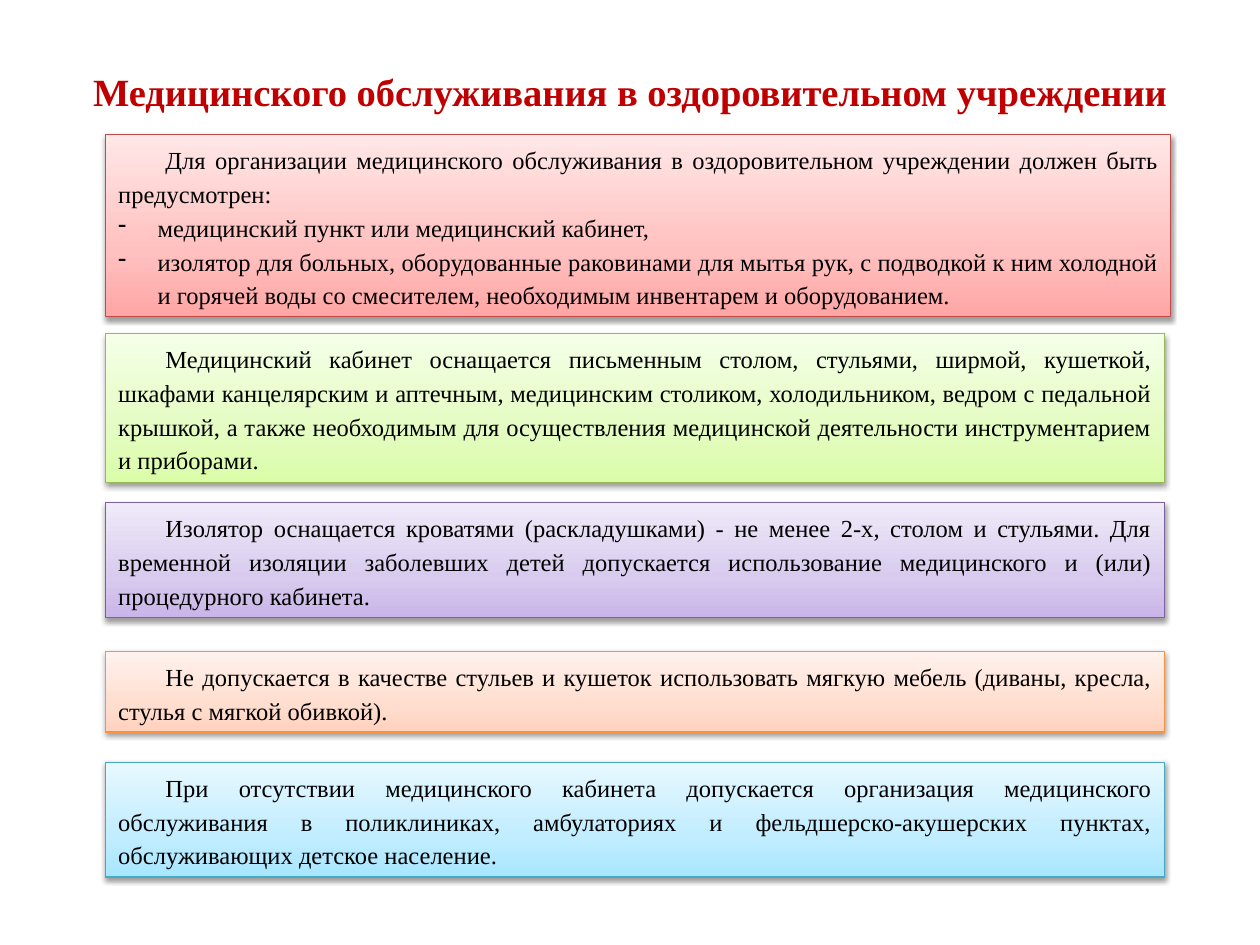
from copy import deepcopy
from dataclasses import dataclass

from lxml.etree import SubElement
from pptx import Presentation
from pptx.dml.color import RGBColor
from pptx.enum.shapes import MSO_SHAPE as Preset
from pptx.enum.text import MSO_ANCHOR as Anchor, MSO_AUTO_SIZE as AutoSize, PP_ALIGN as Align
from pptx.oxml.ns import qn
from pptx.util import Pt

FONT = "Times New Roman"
LEFT = 60.5
FIRST_INDENT = 27
BULLET_INDENT = 22.5


@dataclass
class Panel:
    top: float
    height: float
    line: str
    gradient: tuple[str, str, str]
    text: str
    bullets: tuple[str, ...] = ()
    width: float = 604.8


PANELS = [
    Panel(
        77, 103.9, "BF4C48", ("FFA6A5", "FFC0BF", "FFE7E7"),
        "Для организации медицинского обслуживания в оздоровительном учреждении "
        "должен быть предусмотрен:",
        (
            "медицинский пункт или медицинский кабинет,",
            "изолятор для больных, оборудованные раковинами для мытья рук, с подводкой "
            "к ним холодной и горячей воды со смесителем, необходимым инвентарем и "
            "оборудованием.",
        ),
        608.6,
    ),
    Panel(
        190.6, 85.2, "98B955", ("DAFDA7", "E4FCC2", "F5FFE7"),
        "Медицинский кабинет оснащается письменным столом, стульями, ширмой, кушеткой, "
        "шкафами канцелярским и аптечным, медицинским столиком, холодильником, ведром "
        "с педальной крышкой, а также необходимым для осуществления медицинской "
        "деятельности инструментарием и приборами.",
    ),
    Panel(
        287.2, 65.6, "7D60A0", ("C9B5E8", "D8CBEE", "F0EAF9"),
        "Изолятор оснащается кроватями (раскладушками) - не менее 2-х, столом и "
        "стульями. Для временной изоляции заболевших детей допускается использование "
        "медицинского и (или) процедурного кабинета.",
    ),
    Panel(
        372.2, 46.2, "F69240", ("FFD2BD", "FFDED0", "FFF2ED"),
        "Не допускается в качестве стульев и кушеток использовать мягкую мебель "
        "(диваны, кресла, стулья с мягкой обивкой).",
    ),
    Panel(
        435.6, 65.6, "46AAC5", ("A7E6FF", "C1EDFF", "E7F8FF"),
        "При отсутствии медицинского кабинета допускается организация медицинского "
        "обслуживания в поликлиниках, амбулаториях и фельдшерско-акушерских пунктах, "
        "обслуживающих детское население.",
    ),
]


def color(value: str) -> RGBColor:
    return RGBColor.from_string(value)


def set_font(para, size: float, value: str, bold: bool = False) -> None:
    para.font.name = FONT
    para.font.size = Pt(size)
    para.font.bold = bold
    para.font.color.rgb = color(value)


def fill_gradient(box, colors: tuple[str, str, str]) -> None:
    box.fill.gradient()
    box.fill.gradient_angle = 90
    stop_list = box._element.spPr.find(qn("a:gradFill")).find(qn("a:gsLst"))
    stop_list.insert(1, deepcopy(stop_list[0]))
    for stop, position, value in zip(box.fill.gradient_stops, (0, 0.35, 1), colors):
        stop.position = position
        stop.color.rgb = color(value)


def add_shadow(box) -> None:
    box.shadow.inherit = False
    effects = box._element.spPr.find(qn("a:effectLst"))
    shadow = SubElement(
        effects, qn("a:outerShdw"), blurRad=str(Pt(3.1)), dist=str(Pt(1.6)),
        dir="5400000", rotWithShape="0",
    )
    tint = SubElement(shadow, qn("a:srgbClr"), val="000000")
    SubElement(tint, qn("a:alpha"), val="38000")


def write_paragraph(para, text: str, bullet: bool) -> None:
    para.text = text
    para.alignment = Align.JUSTIFY
    para.line_spacing = 1.15
    properties = para._p.get_or_add_pPr()
    margin, indent = (BULLET_INDENT, -BULLET_INDENT) if bullet else (0, FIRST_INDENT)
    properties.set("marL", str(Pt(margin)))
    properties.set("indent", str(Pt(indent)))
    if bullet:
        SubElement(properties, qn("a:buFontTx"))
        SubElement(properties, qn("a:buChar"), char="-")
    set_font(para, 14, "000000")


def add_panel(page, panel: Panel) -> None:
    box = page.shapes.add_shape(
        Preset.RECTANGLE, Pt(LEFT), Pt(panel.top), Pt(panel.width), Pt(panel.height)
    )
    fill_gradient(box, panel.gradient)
    box.line.color.rgb = color(panel.line)
    box.line.width = Pt(0.75)
    add_shadow(box)
    frame = box.text_frame
    frame.word_wrap = True
    frame.auto_size = AutoSize.SHAPE_TO_FIT_TEXT
    frame.vertical_anchor = Anchor.TOP
    write_paragraph(frame.paragraphs[0], panel.text, False)
    for text in panel.bullets:
        write_paragraph(frame.add_paragraph(), text, True)


def add_title(page, text: str) -> None:
    box = page.shapes.add_textbox(Pt(36), Pt(21.6), Pt(648), Pt(61.2))
    frame = box.text_frame
    frame.word_wrap = True
    frame.vertical_anchor = Anchor.MIDDLE
    para = frame.paragraphs[0]
    para.text = text
    para.alignment = Align.CENTER
    set_font(para, 22, "C00000", True)


def main() -> None:
    deck = Presentation()
    deck.slide_width, deck.slide_height = Pt(720), Pt(540)
    page = deck.slides.add_slide(deck.slide_layouts[6])
    add_title(page, "Медицинского обслуживания в оздоровительном учреждении")
    for panel in PANELS:
        add_panel(page, panel)
    deck.save("out.pptx")


if __name__ == "__main__":
    main()
